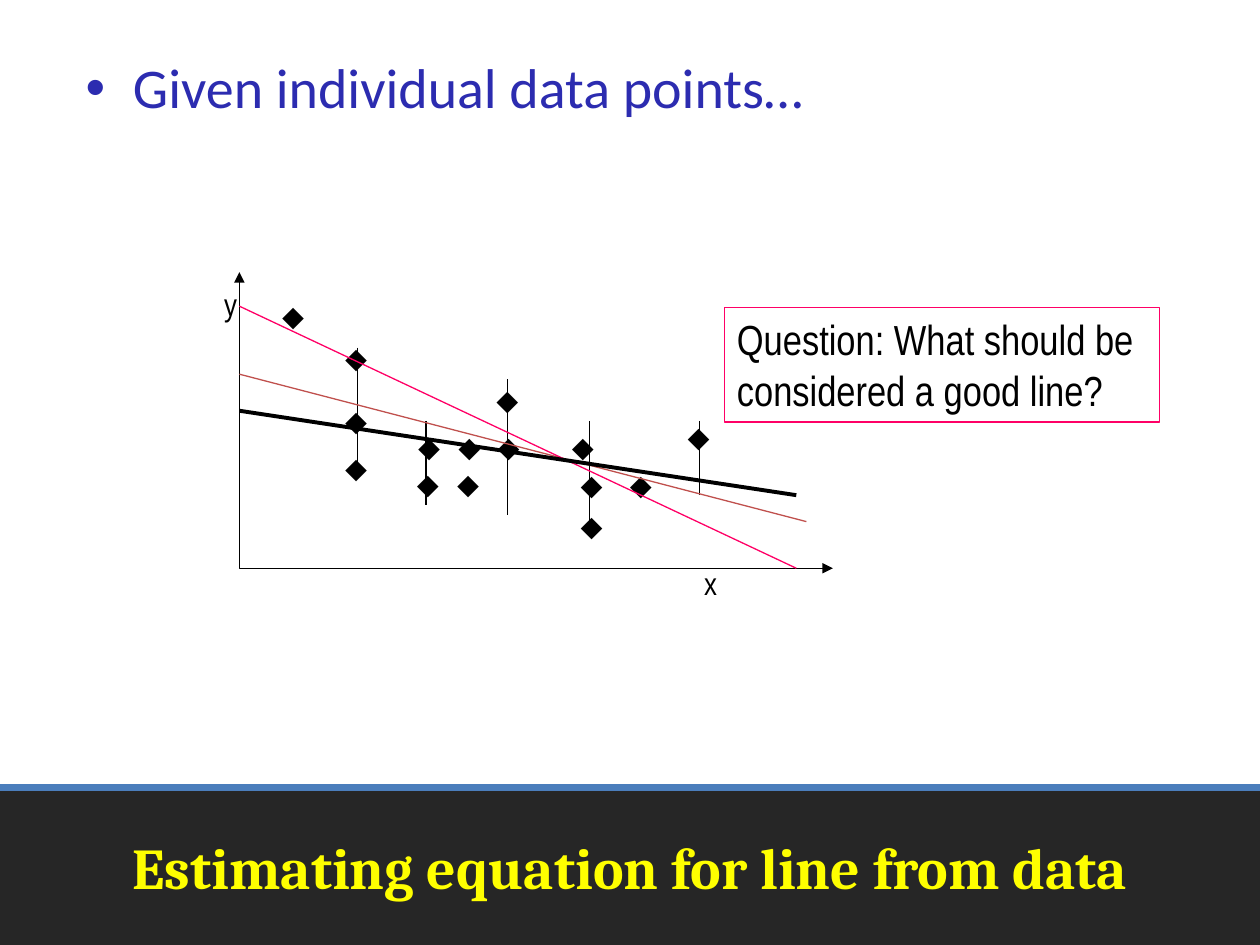
from dataclasses import dataclass
from typing import NamedTuple

from lxml import etree
from pptx import Presentation
from pptx.dml.color import RGBColor
from pptx.enum.shapes import MSO_CONNECTOR, MSO_SHAPE
from pptx.enum.text import MSO_ANCHOR, MSO_AUTO_SIZE, PP_ALIGN
from pptx.oxml.ns import qn
from pptx.util import Inches, Pt

RECT = MSO_SHAPE.RECTANGLE
STRAIGHT = MSO_CONNECTOR.STRAIGHT
MIDDLE = MSO_ANCHOR.MIDDLE
TOP = MSO_ANCHOR.TOP
FIT = MSO_AUTO_SIZE.SHAPE_TO_FIT_TEXT
FIXED = MSO_AUTO_SIZE.NONE
LEFT = PP_ALIGN.LEFT
CENTER = PP_ALIGN.CENTER


@dataclass(frozen=True)
class Type:
    name: str
    size: float
    color: str
    bold: bool = False


@dataclass(frozen=True)
class Theme:
    ink: str = "000000"
    paper: str = "FFFFFF"
    band: str = "262626"
    edge: str = "4B7EBC"
    rose: str = "FF0066"
    rust: str = "C0504D"
    thin: float = 0.75
    bold: float = 2.25
    rule: float = 4
    title: Type = Type("Cambria", 33, "FFFF00", True)
    body: Type = Type("Calibri", 32, "2C2CB0")
    mark: Type = Type("Arial", 18, "000000")
    axis: Type = Type("Arial Narrow", 18, "000000")
    note: Type = Type("Arial Narrow", 24, "000000")


class Box(NamedTuple):
    x: float
    y: float
    w: float
    h: float


class Line(NamedTuple):
    x1: float
    y1: float
    x2: float
    y2: float
    color: str
    width: float


class Label(NamedTuple):
    text: str
    box: Box
    type: Type


THEME = Theme()
BAND = Box(0, 6.25, 10, 1.25)
ORIGIN_X, ORIGIN_Y = 1.9, 4.51
AXIS_TOP, AXIS_END = 2.16, 6.61

# Centres of the data points
POINTS = [
    (2.32, 2.53), (2.82, 2.86), (2.82, 3.36), (2.82, 3.74),
    (3.4, 3.57), (3.72, 3.57), (4.03, 3.57), (4.62, 3.57),
    (4.02, 3.2), (4.69, 3.87), (5.08, 3.87), (5.54, 3.49),
    (3.39, 3.86), (3.71, 3.86), (4.69, 4.2),
]
MARK_W, MARK_H = 0.35, 0.4
MARK_DX, MARK_DY = 0.18, 0.23

# x, top and bottom of each residual
DROPS = [
    (2.84, 2.76, 3.76), (3.38, 3.34, 4.01), (4.03, 3.01, 4.09),
    (4.68, 3.34, 4.26), (5.55, 3.34, 3.93),
]
FITS = [
    Line(ORIGIN_X, 2.97, 6.4, 4.14, THEME.rust, THEME.thin),
    Line(ORIGIN_X, 2.43, 6.32, ORIGIN_Y, THEME.rose, THEME.thin),
    Line(ORIGIN_X, 3.26, 6.32, 3.93, THEME.ink, THEME.bold),
]
NAMES = [
    Label("x", Box(5.49, 4.43, 0.3, 0.4), THEME.axis),
    Label("y", Box(1.68, 2.21, 0.3, 0.4), THEME.axis),
]


def rgb(color: str) -> RGBColor:
    return RGBColor.from_string(color)


def inches(box: Box) -> list:
    return [Inches(v) for v in box]


def place(shape, box: Box) -> None:
    shape.left, shape.top, shape.width, shape.height = inches(box)


def add_run(para, text: str, kind: Type) -> None:
    run = para.add_run()
    run.text = text
    run.font.name = kind.name
    run.font.size = Pt(kind.size)
    run.font.bold = kind.bold
    run.font.color.rgb = rgb(kind.color)


def stroke(line, color: str, width: float) -> None:
    line.color.rgb = rgb(color)
    line.width = Pt(width)


def draw_line(shapes, item: Line):
    ends = [Inches(v) for v in item[:4]]
    link = shapes.add_connector(STRAIGHT, *ends)
    stroke(link.line, item.color, item.width)
    etree.SubElement(link.element.spPr, qn("a:effectLst"))
    return link


def draw_rect(shapes, box: Box, fill: str):
    rect = shapes.add_shape(RECT, *inches(box))
    rect.shadow.inherit = False
    rect.fill.solid()
    rect.fill.fore_color.rgb = rgb(fill)
    return rect


def draw_label(shapes, item: Label) -> None:
    frame = shapes.add_textbox(*inches(item.box)).text_frame
    frame.word_wrap = False
    frame.auto_size = FIT
    add_run(frame.paragraphs[0], item.text, item.type)


def draw_title(slide) -> None:
    """Fill the title and lay the dark band and its edge behind it."""
    title = slide.shapes.title
    place(title, Box(0.25, BAND.y, 9.5, BAND.h))
    frame = title.text_frame
    frame.vertical_anchor = MIDDLE
    frame.auto_size = FIXED
    para = frame.paragraphs[0]
    para.alignment = CENTER
    add_run(para, "Estimating equation for line from data", THEME.title)
    band = draw_rect(slide.shapes, BAND, THEME.band)
    band.line.fill.background()
    edge = draw_line(slide.shapes, Line(
        BAND.x, BAND.y, BAND.x + BAND.w, BAND.y, THEME.edge, THEME.rule))
    for part in (band, edge):
        title.element.addprevious(part.element)


def draw_body(slide) -> None:
    body = slide.placeholders[1]
    place(body, Box(0.58, 0.37, 8.5, 2.33))
    body.text_frame.auto_size = FIXED
    add_run(body.text_frame.paragraphs[0],
            "Given individual data points…", THEME.body)


def draw_axes(shapes) -> None:
    pen = shapes.build_freeform(Inches(ORIGIN_X), Inches(AXIS_TOP))
    pen.add_line_segments(
        [(Inches(ORIGIN_X), Inches(ORIGIN_Y)),
         (Inches(AXIS_END), Inches(ORIGIN_Y))], close=False)
    axes = pen.convert_to_shape()
    axes.shadow.inherit = False
    axes.fill.background()
    stroke(axes.line, THEME.ink, THEME.thin)
    outline = axes.element.spPr.find(qn("a:ln"))
    for tag in ("a:headEnd", "a:tailEnd"):
        etree.SubElement(outline, qn(tag), type="triangle")


def draw_note(shapes) -> None:
    note = draw_rect(shapes, Box(5.75, 2.44, 3.45, 0.91), THEME.paper)
    stroke(note.line, THEME.rose, THEME.thin)
    frame = note.text_frame
    frame.word_wrap = False
    frame.auto_size = FIT
    frame.vertical_anchor = TOP
    para = frame.paragraphs[0]
    para.alignment = LEFT
    add_run(para, "Question: What should be", THEME.note)
    para.add_line_break()
    add_run(para, "considered a good line?", THEME.note)


def main() -> None:
    deck = Presentation()
    deck.slide_width, deck.slide_height = Inches(10), Inches(7.5)
    slide = deck.slides.add_slide(deck.slide_layouts[1])
    shapes = slide.shapes
    draw_title(slide)
    draw_body(slide)
    draw_axes(shapes)
    for x, y in POINTS:
        box = Box(x - MARK_DX, y - MARK_DY, MARK_W, MARK_H)
        draw_label(shapes, Label("⬥", box, THEME.mark))
    drops = [Line(x, top, x, end, THEME.ink, THEME.thin)
             for x, top, end in DROPS]
    for item in drops + FITS:
        draw_line(shapes, item)
    draw_note(shapes)
    for item in NAMES:
        draw_label(shapes, item)
    deck.save("out.pptx")


if __name__ == "__main__":
    main()
